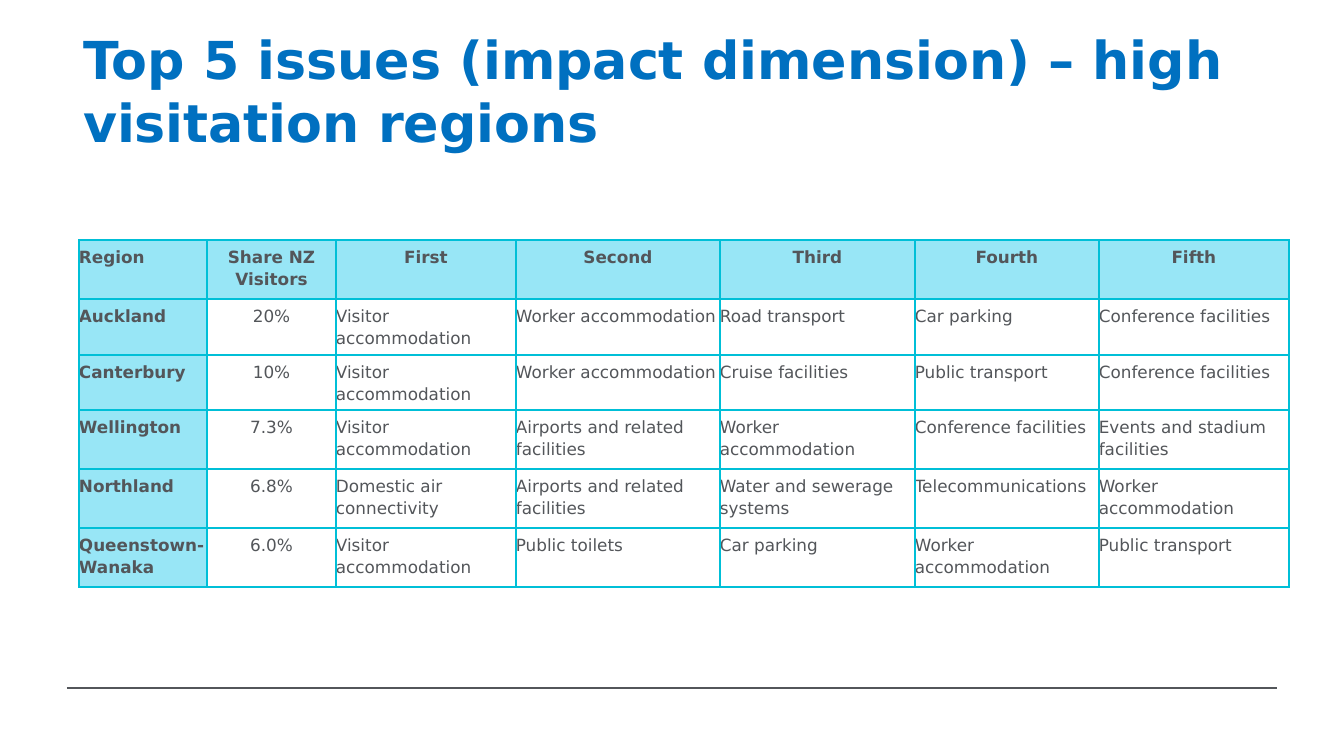
from dataclasses import dataclass

from lxml import etree
from pptx import Presentation
from pptx.dml.color import RGBColor
from pptx.enum.shapes import MSO_CONNECTOR
from pptx.enum.text import MSO_ANCHOR, MSO_AUTO_SIZE, PP_ALIGN
from pptx.oxml.ns import qn
from pptx.util import Pt

STRAIGHT = MSO_CONNECTOR.STRAIGHT
BOTTOM, TOP = MSO_ANCHOR.BOTTOM, MSO_ANCHOR.TOP
NO_FIT = MSO_AUTO_SIZE.NONE
LEFT, CENTER = PP_ALIGN.LEFT, PP_ALIGN.CENTER
TITLE_ONLY = 5
EMU_PER_PX = 914400 / 134.4


@dataclass(frozen=True)
class Theme:
    font: str = "DejaVu Sans"
    title_color: str = "0070C0"
    text_color: str = "53565A"
    header_fill: str = "98E6F6"
    body_fill: str = "FFFFFF"
    border_color: str = "00BFD7"
    title_size: int = 28
    table_size: int = 9
    table_leading: int = 12
    border_width: int = 1
    rule_width: float = 0.8


THEME = Theme()
TITLE = "Top 5 issues (impact dimension) – high visitation regions"
COLUMN_WIDTHS = [128, 129, 180, 204, 195, 184, 190]
ROW_HEIGHTS = [59, 56, 55, 59, 59, 59]
ISSUES = [
    ["Region", "Share NZ Visitors", "First", "Second", "Third", "Fourth", "Fifth"],
    ["Auckland", "20%", "Visitor accommodation", "Worker accommodation",
     "Road transport", "Car parking", "Conference facilities"],
    ["Canterbury", "10%", "Visitor accommodation", "Worker accommodation",
     "Cruise facilities", "Public transport", "Conference facilities"],
    ["Wellington", "7.3%", "Visitor accommodation", "Airports and related facilities",
     "Worker accommodation", "Conference facilities", "Events and stadium facilities"],
    ["Northland", "6.8%", "Domestic air connectivity", "Airports and related facilities",
     "Water and sewerage systems", "Telecommunications", "Worker accommodation"],
    ["Queenstown-Wanaka", "6.0%", "Visitor accommodation", "Public toilets",
     "Car parking", "Worker accommodation", "Public transport"],
]


def px(length):
    return round(length * EMU_PER_PX)


def color(value):
    return RGBColor.from_string(value)


def style_font(font, size, value, bold):
    font.name = THEME.font
    font.size = Pt(size)
    font.color.rgb = color(value)
    font.bold = bold


def add_title(page, left, top, width, height):
    title = page.shapes.title
    title.left, title.top = px(left), px(top)
    title.width, title.height = px(width), px(height)
    frame = title.text_frame
    frame.text = TITLE
    frame.word_wrap = True
    frame.auto_size = NO_FIT
    frame.vertical_anchor = BOTTOM
    frame.margin_left = frame.margin_right = px(13)
    frame.margin_top, frame.margin_bottom = px(7), 0
    para = frame.paragraphs[0]
    para.alignment = LEFT
    style_font(para.runs[0].font, THEME.title_size, THEME.title_color, True)


def add_footer_rule(page, left, top, width):
    rule = page.shapes.add_connector(
        STRAIGHT, px(left), px(top), px(left + width), px(top))
    rule.line.color.rgb = color(THEME.text_color)
    rule.line.width = Pt(THEME.rule_width)
    etree.SubElement(rule._element.spPr, qn("a:effectLst"))


def add_borders(cell):
    properties = cell._tc.get_or_add_tcPr()
    for position, side in enumerate(("lnL", "lnR", "lnT", "lnB")):
        border = etree.Element(qn(f"a:{side}"), w=str(Pt(THEME.border_width)))
        fill = etree.SubElement(border, qn("a:solidFill"))
        etree.SubElement(fill, qn("a:srgbClr"), val=THEME.border_color)
        properties.insert(position, border)


def fill_cell(cell, text, is_header, alignment):
    cell.margin_left = cell.margin_right = 0
    cell.margin_top = cell.margin_bottom = px(5)
    cell.vertical_anchor = TOP
    cell.fill.solid()
    cell.fill.fore_color.rgb = color(
        THEME.header_fill if is_header else THEME.body_fill)
    add_borders(cell)
    cell.text_frame.text = text
    para = cell.text_frame.paragraphs[0]
    para.alignment = alignment
    para.line_spacing = Pt(THEME.table_leading)
    style_font(para.runs[0].font, THEME.table_size, THEME.text_color, is_header)


def add_issue_table(page, left, top):
    table = page.shapes.add_table(
        len(ROW_HEIGHTS), len(COLUMN_WIDTHS), px(left), px(top),
        px(sum(COLUMN_WIDTHS)), px(sum(ROW_HEIGHTS))).table
    table.horz_banding = False
    for column, width in zip(table.columns, COLUMN_WIDTHS):
        column.width = px(width)
    for row, height in zip(table.rows, ROW_HEIGHTS):
        row.height = px(height)
    for row_index, values in enumerate(ISSUES):
        for column_index, text in enumerate(values):
            is_header = row_index == 0 or column_index == 0
            is_centered = column_index == 1 or (row_index == 0 and column_index > 0)
            fill_cell(table.cell(row_index, column_index), text, is_header,
                      CENTER if is_centered else LEFT)


def main():
    deck = Presentation()
    deck.slide_width, deck.slide_height = px(1344), px(756)
    page = deck.slides.add_slide(deck.slide_layouts[TITLE_ONLY])
    add_footer_rule(page, 67, 688, 1210)
    add_title(page, 70, 78, 1210, 75)
    add_issue_table(page, 79, 240)
    deck.save("out.pptx")


if __name__ == "__main__":
    main()
